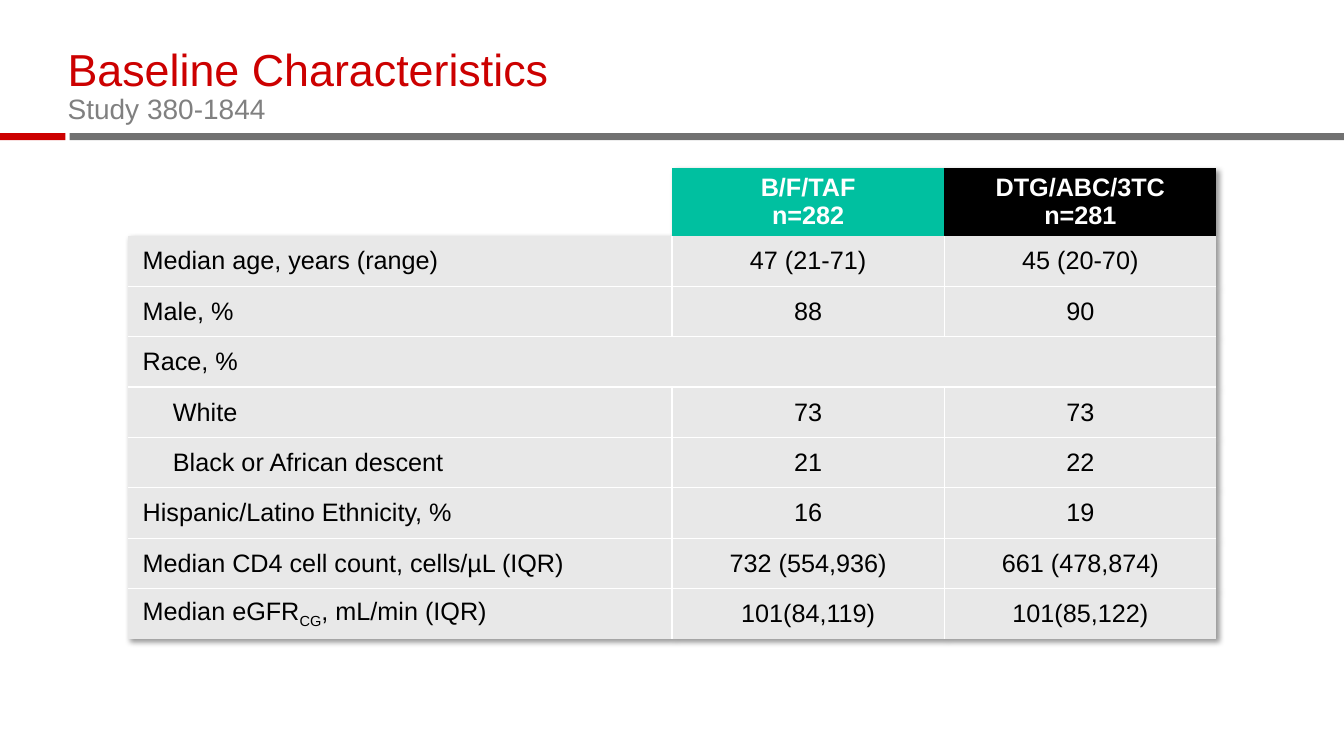
from lxml import etree
from pptx import Presentation, util as u
from pptx.dml.color import RGBColor
from pptx.enum import shapes, text
from pptx.oxml import parse_xml
from pptx.oxml.ns import qn

NAMESPACE = "http://schemas.openxmlformats.org/drawingml/2006/main"
NO_STYLE = "{2D5ABB26-0587-4C30-8999-92F81FD0307C}"
RED, GREY, SUBTITLE_GREY = "CC0000", "717171", "808080"
TEAL, BLACK, WHITE, PALE = "00C0A0", "000000", "FFFFFF", "E8E8E8"

WIDTH, HEIGHT = 13.33, 7.5
COLUMNS = [5.4, 2.7, 2.7]
HEADER_ROW, BODY_ROW = 0.67, 0.5
HEADERS = [("B/F/TAF\nn=282", TEAL), ("DTG/ABC/3TC\nn=281", BLACK)]
# Label, indent in inches, values; a row without values spans the table
ROWS = [
    (["Median age, years (range)"], 0, ["47 (21-71)", "45 (20-70)"]),
    (["Male, %"], 0, ["88", "90"]),
    (["Race, %"], 0, []),
    (["White"], 0.3, ["73", "73"]),
    (["Black or African descent"], 0.3, ["21", "22"]),
    (["Hispanic/Latino Ethnicity, %"], 0, ["16", "19"]),
    (["Median CD4 cell count, cells/µL (IQR)"], 0,
     ["732 (554,936)", "661 (478,874)"]),
    (["Median eGFR", "CG", ", mL/min (IQR)"], 0,
     ["101(84,119)", "101(85,122)"]),
]


def colour(value):
    return RGBColor.from_string(value)


def add_span(para, words, size=18, color=BLACK, bold=False, subscript=False):
    span = para.add_run()
    span.text = words
    font = span.font
    font.name, font.size, font.bold = "Arial", u.Pt(size), bold
    font.color.rgb = colour(color)
    if subscript:
        span._r.get_or_add_rPr().set("baseline", "-25000")


def add_bar(page, left, width, fill):
    bar = page.shapes.add_shape(
        shapes.MSO_SHAPE.RECTANGLE,
        *(u.Inches(n) for n in (left, 1.32, width, 0.07)))
    bar.shadow.inherit = False
    bar.fill.solid()
    bar.fill.fore_color.rgb = colour(fill)
    bar.line.fill.background()


def add_title(page, heading, subtitle):
    title = page.shapes.title
    title.left, title.top = u.Inches(0.67), u.Inches(0.51)
    title.width, title.height = u.Inches(12), u.Inches(0.74)
    frame = title.text_frame
    frame.word_wrap = True
    frame.auto_size = text.MSO_AUTO_SIZE.NONE
    frame.vertical_anchor = text.MSO_ANCHOR.BOTTOM
    frame.margin_left = frame.margin_right = 0
    frame.margin_top = frame.margin_bottom = 0
    para = frame.paragraphs[0]
    para.alignment = text.PP_ALIGN.LEFT
    para.line_spacing = 0.9
    add_span(para, heading, size=32, color=RED)
    para.add_line_break()
    add_span(para, subtitle, size=20, color=SUBTITLE_GREY)


def format_cell(cell, fill, edges=""):
    cell.margin_left = cell.margin_right = u.Inches(0.15)
    cell.margin_top = cell.margin_bottom = u.Inches(0.05)
    cell.vertical_anchor = text.MSO_ANCHOR.MIDDLE
    cell.fill.solid()
    cell.fill.fore_color.rgb = colour(fill)
    # Border lines come before the fill, in the order L, R, T, B
    properties = cell._tc.get_or_add_tcPr()
    for place, edge in enumerate(edges):
        properties.insert(place, parse_xml(
            f'<a:ln{edge} xmlns:a="{NAMESPACE}" w="12700"><a:solidFill>'
            f'<a:srgbClr val="{WHITE}"/></a:solidFill></a:ln{edge}>'))


def fill_centred(cell, words, **style):
    for index, line in enumerate(words.split("\n")):
        frame = cell.text_frame
        para = frame.add_paragraph() if index else frame.paragraphs[0]
        para.alignment = text.PP_ALIGN.CENTER
        add_span(para, line, **style)


def fill_label(cell, parts, indent):
    para = cell.text_frame.paragraphs[0]
    para._p.get_or_add_pPr().set("marL", str(u.Inches(indent)))
    for index, part in enumerate(parts):
        add_span(para, part, subscript=index == 1)


def style_table(table):
    table.first_row = table.horz_banding = False
    properties = table._tbl.tblPr
    style = properties.find(qn("a:tableStyleId"))
    style.text = NO_STYLE
    style.addprevious(etree.fromstring(
        f'<a:effectLst xmlns:a="{NAMESPACE}"><a:outerShdw blurRad="50800" '
        'dist="38100" dir="2700000" algn="tl" rotWithShape="0">'
        '<a:prstClr val="black"><a:alpha val="40000"/></a:prstClr>'
        '</a:outerShdw></a:effectLst>'))


def add_baseline_table(page):
    total = sum(COLUMNS)
    table = page.shapes.add_table(
        len(ROWS) + 1, len(COLUMNS), u.Inches((WIDTH - total) / 2),
        u.Inches(1.67), u.Inches(total),
        u.Inches(HEADER_ROW + BODY_ROW * len(ROWS))).table
    style_table(table)
    for column, width in zip(table.columns, COLUMNS):
        column.width = u.Inches(width)
    for index, row in enumerate(table.rows):
        row.height = u.Inches(BODY_ROW if index else HEADER_ROW)

    # Treatment headers
    for column, (words, fill) in enumerate(HEADERS, 1):
        cell = table.cell(0, column)
        format_cell(cell, fill)
        fill_centred(cell, words, color=WHITE, bold=True)

    # Characteristics
    last = len(COLUMNS) - 1
    for row, (parts, indent, values) in enumerate(ROWS, 1):
        level = "T" * (row > 1) + "B" * (row < len(ROWS))
        label = table.cell(row, 0)
        fill_label(label, parts, indent)
        if not values:
            label.merge(table.cell(row, last))
        format_cell(label, PALE, "R" * bool(values) + level)
        for column, value in enumerate(values, 1):
            cell = table.cell(row, column)
            format_cell(cell, PALE, "L" + "R" * (column < last) + level)
            fill_centred(cell, value)


def main():
    deck = Presentation()
    deck.slide_width, deck.slide_height = u.Inches(WIDTH), u.Inches(HEIGHT)
    page = deck.slides.add_slide(deck.slide_layouts.get_by_name("Title Only"))
    # Rule under the title
    add_bar(page, 0.69, WIDTH - 0.69, GREY)
    add_bar(page, 0, 0.65, RED)
    add_title(page, "Baseline Characteristics", "Study 380-1844")
    add_baseline_table(page)
    deck.save("out.pptx")


if __name__ == "__main__":
    main()
